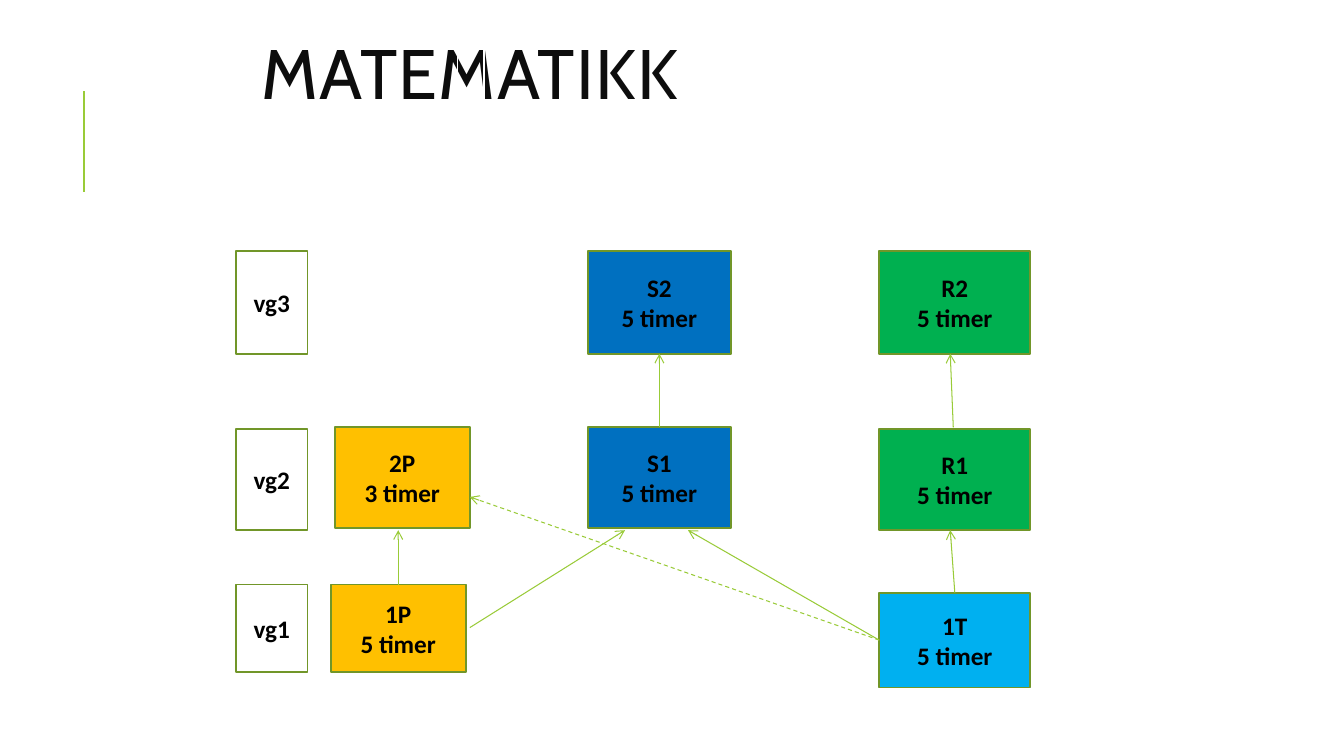
"""Build the slide showing the mathematics course paths from vg1 to vg3."""
from lxml.etree import SubElement
from pptx import Presentation
from pptx.dml.color import RGBColor
from pptx.enum.dml import MSO_LINE
from pptx.enum.shapes import MSO_CONNECTOR, MSO_SHAPE
from pptx.enum.text import MSO_ANCHOR, MSO_AUTO_SIZE, PP_ALIGN
from pptx.oxml.ns import qn
from pptx.util import Inches, Pt

TITLE = "MATEMATIKK"
COLORS = {"title": "0D0D0D", "text": "000000", "outline": "719629", "arrow": "99CB38",
          "grid": "FFFFFF", "P": "FFC000", "T": "00B0F0", "S": "0070C0", "R": "00B050"}
COLUMNS = {"level": (2.34, 0.71), "P": (3.28, 1.34), "S": (5.83, 1.42), "R": (8.72, 1.5)}
ROWS = {"vg3": (2.49, 1.02), "vg2": (4.24, 1), "vg1": (5.8, 0.87)}
GRID_COLUMNS = [0.26, 3, 3]
GRID_ROWS = [2.54, 2.87, 2.22]

# name, hours, column, row, fill, nudge (left, top, extra height)
COURSES = [
    ("1P", "5 timer", "P", "vg1", "P", (0, 0, 0)),
    ("1T", "5 timer", "R", "vg1", "T", (0, 0.08, 0.07)),
    ("2P", "3 timer", "P", "vg2", "P", (0.04, 0, 0)),
    ("S1", "5 timer", "S", "vg2", "S", (0, 0, 0)),
    ("R1", "5 timer", "R", "vg2", "R", (0, 0.02, 0)),
    ("S2", "5 timer", "S", "vg3", "S", (0, 0, 0)),
    ("R2", "5 timer", "R", "vg3", "R", (0, 0, 0)),
]
LEVELS = [("vg1", 0), ("vg2", 0.02), ("vg3", 0)]
# start course, share of its width and height, end course, share, dashed
ARROWS = [
    ("1P", (1.03, 0.49), "S1", (0.26, 1.02), False),
    ("1T", (0, 0.5), "S1", (0.7, 1.02), False),
    ("1P", (0.5, 0), "2P", (0.47, 1.02), False),
    ("S1", (0.5, 0), "S2", (0.5, 1), False),
    ("1T", (0.5, 0), "R1", (0.47, 1), False),
    ("R1", (0.49, -0.02), "R2", (0.47, 1), False),
    ("1T", (0, 0.5), "2P", (1, 0.69), True),
]


def rgb(name):
    return RGBColor.from_string(COLORS[name])


def add_title(s):
    sp = s.shapes.title
    sp.left, sp.top, sp.width, sp.height = map(Inches, (2.49, 0.23, 8.35, 1.11))
    tf = sp.text_frame
    tf.text = TITLE
    tf.auto_size = MSO_AUTO_SIZE.NONE
    tf.vertical_anchor = MSO_ANCHOR.MIDDLE
    p = tf.paragraphs[0]
    p.alignment, p.line_spacing = PP_ALIGN.LEFT, 0.8
    font = p.runs[0].font
    font.name, font.size, font.color.rgb = "Cabin", Pt(50), rgb("title")
    p.runs[0]._r.get_or_add_rPr().set("spc", "100")


def add_grid(s):
    size = sum(GRID_COLUMNS), sum(GRID_ROWS)
    table = s.shapes.add_table(len(GRID_ROWS), len(GRID_COLUMNS),
                               *map(Inches, (4.54, -0.14, *size))).table
    table.first_row = table.horz_banding = False
    for column, width in zip(table.columns, GRID_COLUMNS):
        column.width = Inches(width)
    for i, (row, height) in enumerate(zip(table.rows, GRID_ROWS)):
        row.height = Inches(height)
        for cell in row.cells:
            tcPr = cell._tc.get_or_add_tcPr()
            for side in "LRTB":
                weight = Pt(3) if i == 0 and side == "B" else Pt(1)
                ln = SubElement(tcPr, qn(f"a:ln{side}"), w=str(weight))
                fill = SubElement(ln, qn("a:solidFill"))
                SubElement(fill, qn("a:srgbClr"), val=COLORS["grid"])
            cell.fill.background()


def add_box(s, lines, box, fill=None):
    sp = s.shapes.add_shape(MSO_SHAPE.RECTANGLE, *map(Inches, box))
    sp.shadow.inherit = False
    if fill:
        sp.fill.solid()
        sp.fill.fore_color.rgb = rgb(fill)
    else:
        sp.fill.background()
    sp.line.color.rgb, sp.line.width = rgb("outline"), Pt(1.25)
    tf = sp.text_frame
    tf.text = "\n".join(lines)
    tf.vertical_anchor = MSO_ANCHOR.MIDDLE
    for p in tf.paragraphs:
        p.alignment = PP_ALIGN.CENTER
        font = p.runs[0].font
        font.name, font.size, font.bold = "Calibri", Pt(18), True
        font.color.rgb = rgb("text")


def add_line(s, start, end, weight, arrow=True, dashed=False):
    line = s.shapes.add_connector(MSO_CONNECTOR.STRAIGHT, *map(Inches, (*start, *end)))
    line.line.color.rgb, line.line.width = rgb("arrow"), Pt(weight)
    if dashed:
        line.line.dash_style = MSO_LINE.DASH
    if arrow:
        SubElement(line.line._get_or_add_ln(), qn("a:tailEnd"), type="arrow")
    SubElement(line._element.spPr, qn("a:effectLst"))


def point(box, share):
    left, top, width, height = box
    return left + share[0] * width, top + share[1] * height


def main():
    prs = Presentation()
    prs.slide_width, prs.slide_height = Inches(13.33), Inches(7.5)
    s = prs.slides.add_slide(prs.slide_layouts[5])
    add_line(s, (0.83, 1.9), (0.83, 0.9), 1.5, arrow=False)
    add_title(s)
    add_grid(s)
    boxes = {}
    for name, hours, column, row, fill, (dx, dy, dh) in COURSES:
        (left, width), (top, height) = COLUMNS[column], ROWS[row]
        boxes[name] = left + dx, top + dy, width, height + dh
        add_box(s, (name, hours), boxes[name], fill)
    for source, out, target, into, dashed in ARROWS:
        add_line(s, point(boxes[source], out), point(boxes[target], into), 0.75, dashed=dashed)
    left, width = COLUMNS["level"]
    for level, dy in LEVELS:
        top, height = ROWS[level]
        add_box(s, (level,), (left, top + dy, width, height))
    prs.save("out.pptx")


if __name__ == "__main__":
    main()
